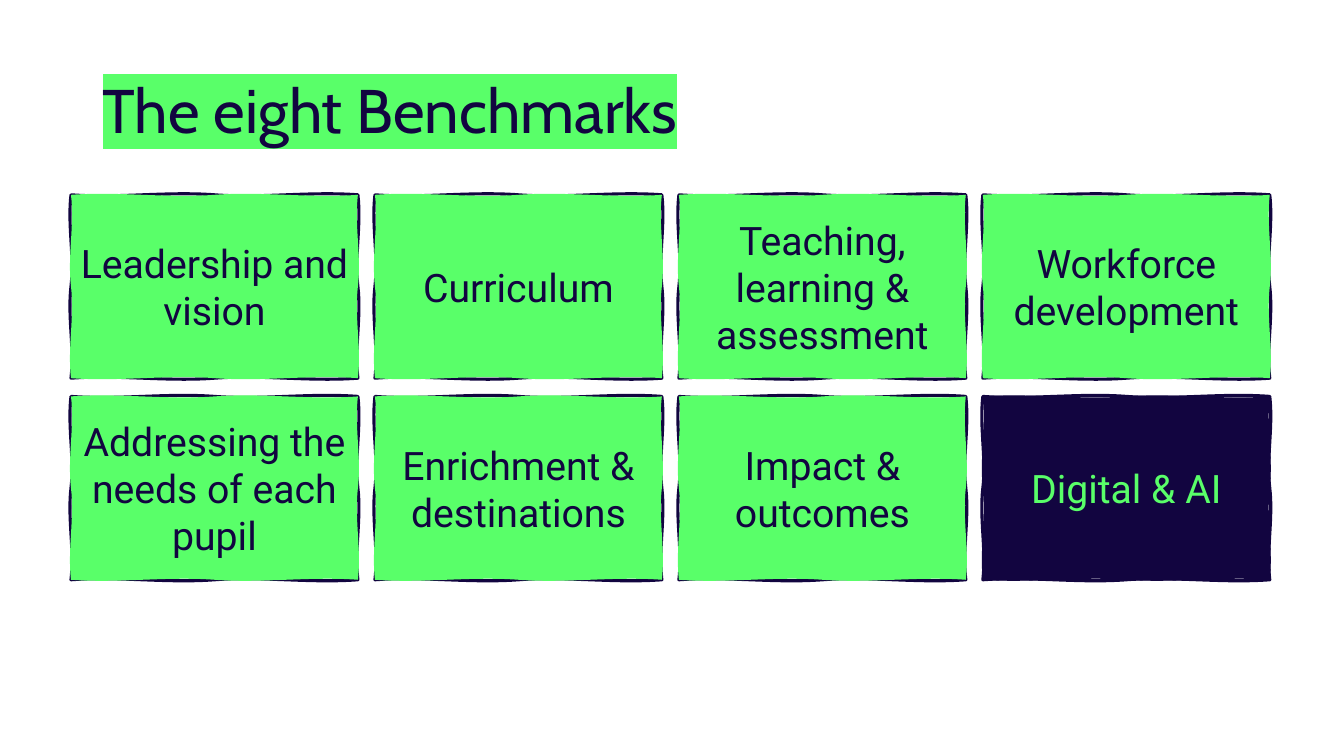
from dataclasses import dataclass

from lxml.etree import SubElement
from pptx import Presentation
from pptx.dml.color import RGBColor
from pptx.enum.text import MSO_ANCHOR as Anchor, PP_ALIGN as Align
from pptx.oxml.ns import qn
from pptx.util import Cm, Pt


@dataclass(frozen=True)
class Theme:
    green: str = "59FF69"
    navy: str = "120540"
    title_font: str = "Cabin"
    card_font: str = "Roboto"
    title_size: int = 44
    card_size: int = 28
    outline: float = 2.25


THEME = Theme()

BENCHMARKS = [
    "Leadership and vision",
    "Curriculum",
    "Teaching, learning & assessment",
    "Workforce development",
    "Addressing the needs of each pupil",
    "Enrichment & destinations",
    "Impact & outcomes",
    "Digital & AI",
]
HIGHLIGHTED = "Digital & AI"

COLUMNS = 4
GRID_LEFT, GRID_TOP = Cm(1.79), Cm(4.91)
PITCH_X, PITCH_Y = Cm(7.66), Cm(5.08)
CARD_WIDTH, CARD_HEIGHT = Cm(7.23), Cm(4.62)
RIPPLE = Cm(0.09)
CURVES_PER_SIDE = 2


def format_text(paragraph, font, size, colour):
    for run in paragraph.runs:
        run.font.name = font
        run.font.size = Pt(size)
        run.font.color.rgb = RGBColor.from_string(colour)


def add_title(slide, wording):
    title = slide.shapes.title
    title.left, title.top = Cm(2.33), Cm(1.02)
    title.width, title.height = Cm(29.21), Cm(3.68)
    frame = title.text_frame
    frame.text = wording
    frame.vertical_anchor = Anchor.MIDDLE
    heading = frame.paragraphs[0]
    heading.alignment = Align.LEFT
    heading.line_spacing = 0.9
    format_text(heading, THEME.title_font, THEME.title_size, THEME.navy)
    properties = heading.runs[0].font._element
    highlight = SubElement(properties, qn("a:highlight"))
    SubElement(highlight, qn("a:srgbClr"), val=THEME.green)
    properties.find(qn("a:solidFill")).addnext(highlight)


def add_segment(contour, tag, points):
    segment = SubElement(contour, qn(tag))
    for x, y in points:
        SubElement(segment, qn("a:pt"), x=str(round(x)), y=str(round(y)))


def add_wavy_contour(contours, corners, ripple, **paint):
    """Draw a closed contour whose sides ripple like a pen sketch."""
    contour = SubElement(contours, qn("a:path"), w=str(CARD_WIDTH),
                         h=str(CARD_HEIGHT), **paint)
    add_segment(contour, "a:moveTo", corners[:1])
    for side, (x, y) in enumerate(corners):
        end_x, end_y = corners[(side + 1) % 4]
        step_x, step_y = (end_x - x) / CURVES_PER_SIDE, (end_y - y) / CURVES_PER_SIDE
        shift_x, shift_y = (0, ripple) if step_y == 0 else (ripple, 0)
        for _ in range(CURVES_PER_SIDE):
            add_segment(contour, "a:cubicBezTo", [
                (x + step_x / 3 + shift_x, y + step_y / 3 + shift_y),
                (x + step_x * 2 / 3 - shift_x, y + step_y * 2 / 3 - shift_y),
                (x + step_x, y + step_y),
            ])
            x, y = x + step_x, y + step_y
    SubElement(contour, qn("a:close"))


def add_sketched_card(slide, left, top):
    corners = [(0, 0), (CARD_WIDTH, 0), (CARD_WIDTH, CARD_HEIGHT), (0, CARD_HEIGHT)]
    builder = slide.shapes.build_freeform(*corners[0])
    builder.add_line_segments(corners[1:])
    card = builder.convert_to_shape(left, top)
    straight = card._element.find(".//" + qn("a:path"))
    contours = straight.getparent()
    contours.remove(straight)
    add_wavy_contour(contours, corners, RIPPLE, fill="none")
    add_wavy_contour(contours, corners, -RIPPLE, stroke="0")
    return card


def add_benchmark(slide, index, wording):
    row, column = divmod(index, COLUMNS)
    card = add_sketched_card(slide, GRID_LEFT + column * PITCH_X,
                             GRID_TOP + row * PITCH_Y)
    background, ink = THEME.green, THEME.navy
    if wording == HIGHLIGHTED:
        background, ink = ink, background
    card.shadow.inherit = False
    card.fill.solid()
    card.fill.fore_color.rgb = RGBColor.from_string(background)
    card.line.color.rgb = RGBColor.from_string(THEME.navy)
    card.line.width = Pt(THEME.outline)

    frame = card.text_frame
    frame.word_wrap = True
    frame.vertical_anchor = Anchor.MIDDLE
    frame.margin_left = frame.margin_right = Cm(0.2)
    frame.text = wording
    label = frame.paragraphs[0]
    label.alignment = Align.CENTER
    format_text(label, THEME.card_font, THEME.card_size, ink)


def main():
    deck = Presentation()
    deck.slide_width, deck.slide_height = Cm(33.87), Cm(19.05)
    slide = deck.slides.add_slide(deck.slide_layouts[5])
    add_title(slide, "The eight Benchmarks")
    for index, wording in enumerate(BENCHMARKS):
        add_benchmark(slide, index, wording)
    deck.save("out.pptx")


if __name__ == "__main__":
    main()
